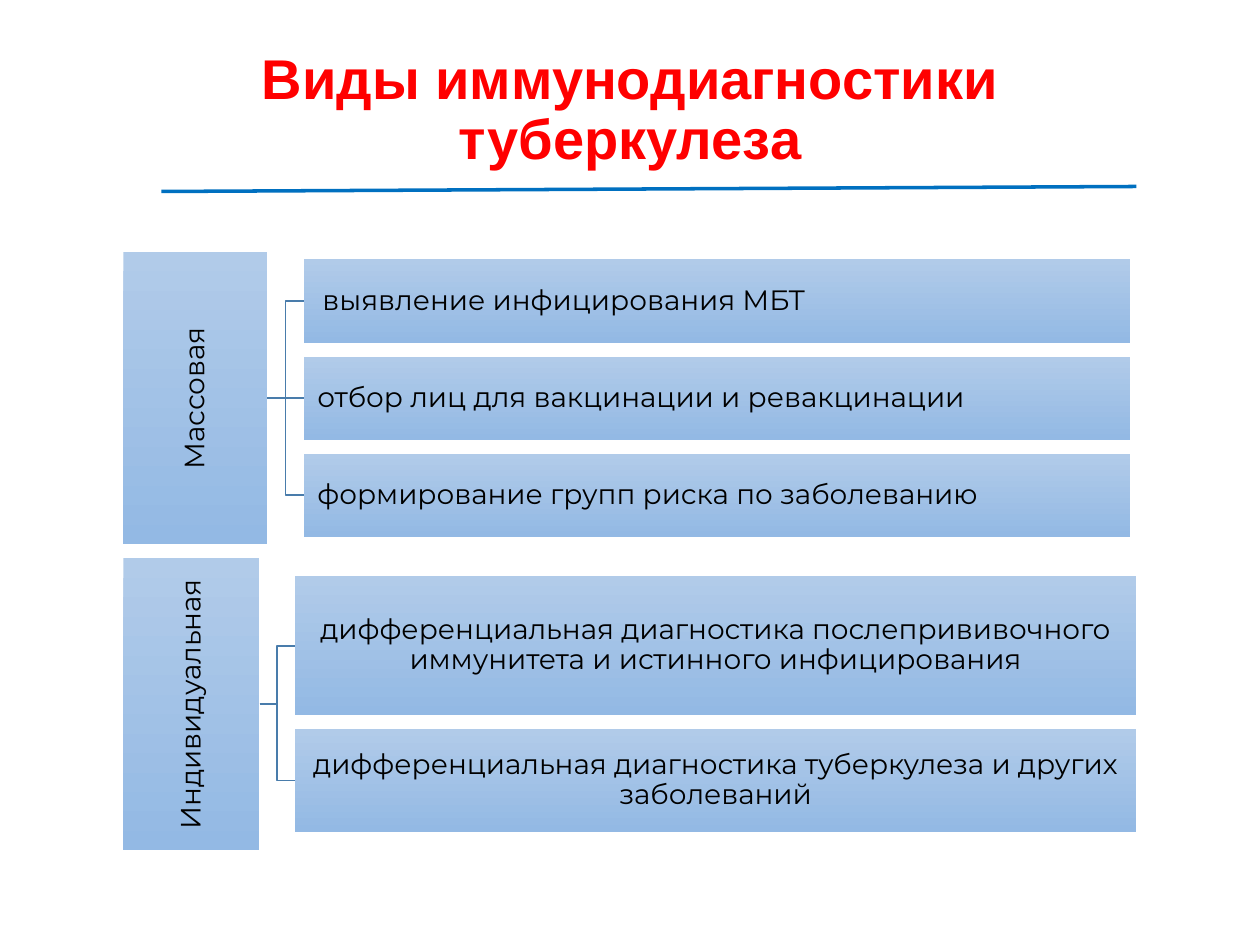
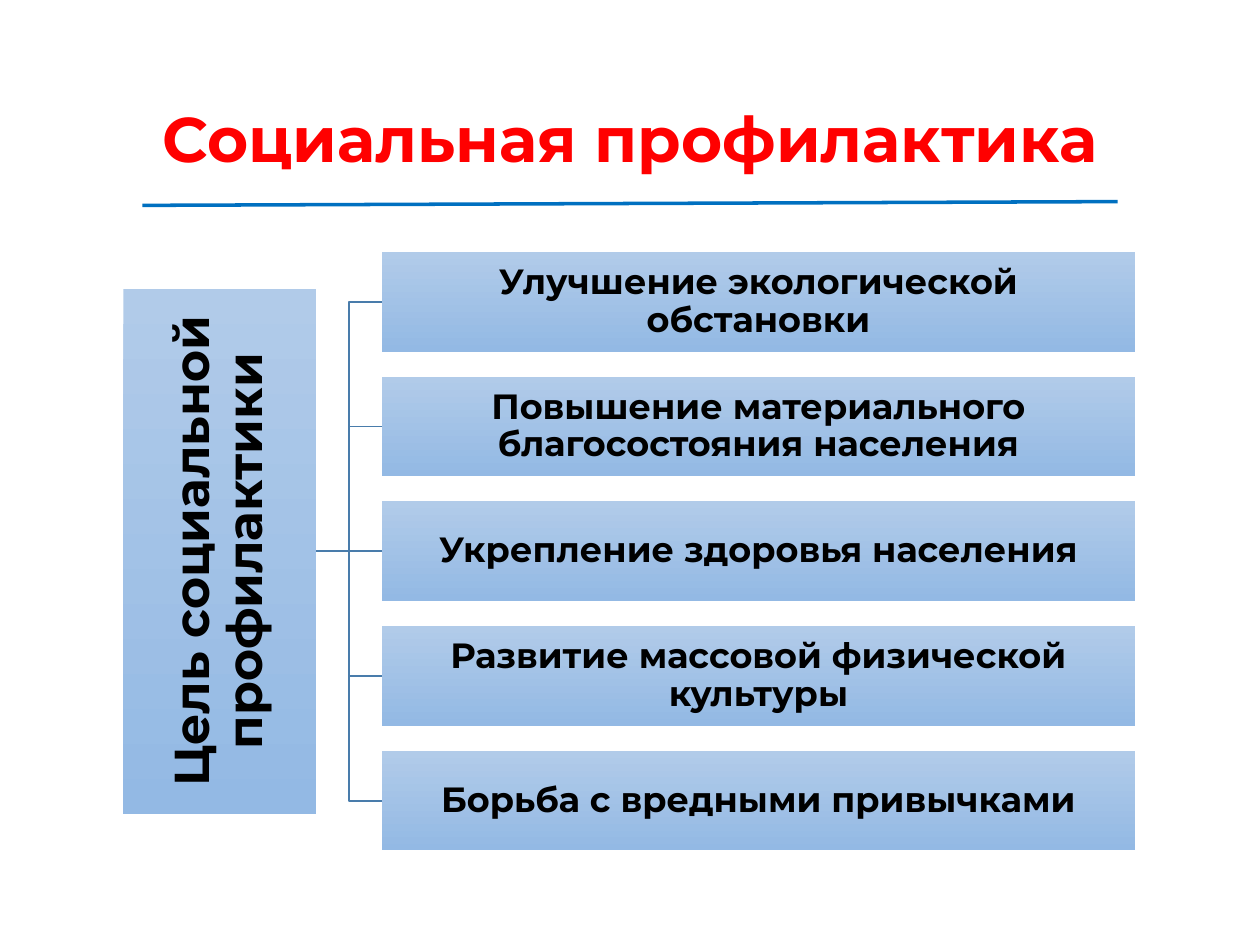
from pptx import Presentation
from pptx.dml.color import RGBColor
from pptx.enum.shapes import MSO_CONNECTOR, MSO_SHAPE
from pptx.enum.text import MSO_ANCHOR, PP_ALIGN
from pptx.oxml.ns import qn
from pptx.util import Inches, Pt
from lxml import etree

RECTANGLE = MSO_SHAPE.RECTANGLE
STRAIGHT, ELBOW = MSO_CONNECTOR.STRAIGHT, MSO_CONNECTOR.ELBOW
MIDDLE = MSO_ANCHOR.MIDDLE
LEFT, CENTER = PP_ALIGN.LEFT, PP_ALIGN.CENTER
LEFT_SIDE, RIGHT_SIDE = 1, 3

COLORS = {
    "title": "FF0000",
    "rule": "0070C0",
    "branch": "497CAB",
    "text": "000000",
    "box_top": "B1CBE9",
    "box_bottom": "93B9E4",
}
FONT = "Montserrat"
TITLE_LEFT, TITLE_TOP, TITLE_WIDTH = 0.69, 0.4, 8.62
ROOT_LEFT = 0.98
INSET = 0.01


def color(name):
    return RGBColor.from_string(COLORS[name])


def write(shape, text, size, font=FONT, ink="text", bold=False, align=CENTER):
    frame = shape.text_frame
    frame.word_wrap = True
    frame.vertical_anchor = MIDDLE
    para = frame.paragraphs[0]
    para.alignment = align
    para.line_spacing = 0.9
    span = para.add_run()
    span.text = text
    span.font.size = Pt(size)
    span.font.name = font
    span.font.bold = bold
    span.font.color.rgb = color(ink)


def add_line(page, kind, start, end, ink, width):
    line = page.shapes.add_connector(kind, *(Inches(value) for value in start + end))
    line.line.color.rgb = color(ink)
    line.line.width = Pt(width)
    etree.SubElement(line._element.spPr, qn("a:effectLst"))
    return line


def add_title(page, text, size, height, rule_start, rule_end, font=FONT):
    """Red heading with the slightly rising blue rule below it."""
    box = page.shapes.add_textbox(
        Inches(TITLE_LEFT), Inches(TITLE_TOP), Inches(TITLE_WIDTH), Inches(height))
    write(box, text, size, font=font, ink="title", bold=True)
    add_line(page, STRAIGHT, rule_start, rule_end, "rule", 2)


def add_box(page, left, top, width, height, text, size,
            indent=INSET, upright=False, **text_format):
    """Gradient rectangle; an upright one has its text running upwards."""
    box = page.shapes.add_shape(
        RECTANGLE, Inches(left), Inches(top), Inches(width), Inches(height))
    box.shadow.inherit = False
    box.line.fill.background()
    box.fill.gradient()
    box.fill.gradient_angle = 270
    for stop, name in zip(box.fill.gradient_stops, ("box_top", "box_bottom")):
        stop.color.rgb = color(name)
    frame = box.text_frame
    frame.margin_left = Inches(indent)
    frame.margin_top = frame.margin_right = frame.margin_bottom = Inches(INSET)
    if upright:
        frame._txBody.bodyPr.set("vert", "vert270")
    write(box, text, size, **text_format)
    return box


def add_tree(page, root_box, root_text, root_size, leaves, leaf_left, leaf_width,
             gap, leaf_size, bold=False, align=CENTER):
    """Root at the left, leaves (text, height, indent) centred on its middle."""
    left, top, width, height = root_box
    root = add_box(page, *root_box, root_text, root_size, upright=True, bold=bold)
    right, middle = left + width, top + height / 2
    total = sum(leaf[1] for leaf in leaves) + gap * (len(leaves) - 1)
    leaf_top = middle - total / 2
    for text, leaf_height, indent in leaves:
        leaf = add_box(page, leaf_left, leaf_top, leaf_width, leaf_height, text,
                       leaf_size, indent=indent, bold=bold, align=align)
        leaf_middle = leaf_top + leaf_height / 2
        level = abs(leaf_middle - middle) < 0.01
        branch = add_line(page, STRAIGHT if level else ELBOW, (right, middle),
                          (leaf_left, leaf_middle), "branch", 1)
        branch.begin_connect(root, RIGHT_SIDE)
        branch.end_connect(leaf, LEFT_SIDE)
        leaf_top += leaf_height + gap


def build_diagnostics(page):
    add_title(page, "Виды иммунодиагностики туберкулеза", 32, 0.97,
              (1.28, 1.52), (9.02, 1.48), font="Arial")
    mass_leaves = [
        ("выявление инфицирования МБТ", 0.66, 0.15),
        ("отбор лиц для вакцинации и ревакцинации", 0.66, 0.11),
        ("формирование групп риска по заболеванию", 0.66, 0.11),
    ]
    add_tree(page, (ROOT_LEFT, 2, 1.14, 2.32), "Массовая", 16, mass_leaves,
             leaf_left=2.41, leaf_width=6.56, gap=0.11, leaf_size=16, align=LEFT)
    individual_leaves = [
        ("дифференциальная диагностика послепрививочного иммунитета "
         "и истинного инфицирования", 1.1, INSET),
        ("дифференциальная диагностика туберкулеза и других заболеваний", 0.82, INSET),
    ]
    add_tree(page, (ROOT_LEFT, 4.43, 1.08, 2.32), "Индивидуальная", 16,
             individual_leaves, leaf_left=2.34, leaf_width=6.68, gap=0.11, leaf_size=16)


def build_prevention(page):
    add_title(page, "Социальная профилактика", 36, 1.45, (1.13, 1.63), (8.87, 1.6))
    goals = [
        "Улучшение экологической обстановки",
        "Повышение материального благосостояния населения",
        "Укрепление здоровья населения",
        "Развитие массовой физической культуры",
        "Борьба с вредными привычками",
    ]
    add_tree(page, (ROOT_LEFT, 2.29, 1.53, 4.17), "Цель социальной профилактики", 28,
             [(goal, 0.79, INSET) for goal in goals],
             leaf_left=3.03, leaf_width=5.98, gap=0.2, leaf_size=20, bold=True)


def main():
    deck = Presentation()
    deck.slide_width, deck.slide_height = Inches(10), Inches(7.5)
    blank = deck.slide_layouts[6]
    for build in (build_diagnostics, build_prevention):
        build(deck.slides.add_slide(blank))
    deck.save("out.pptx")


if __name__ == "__main__":
    main()
